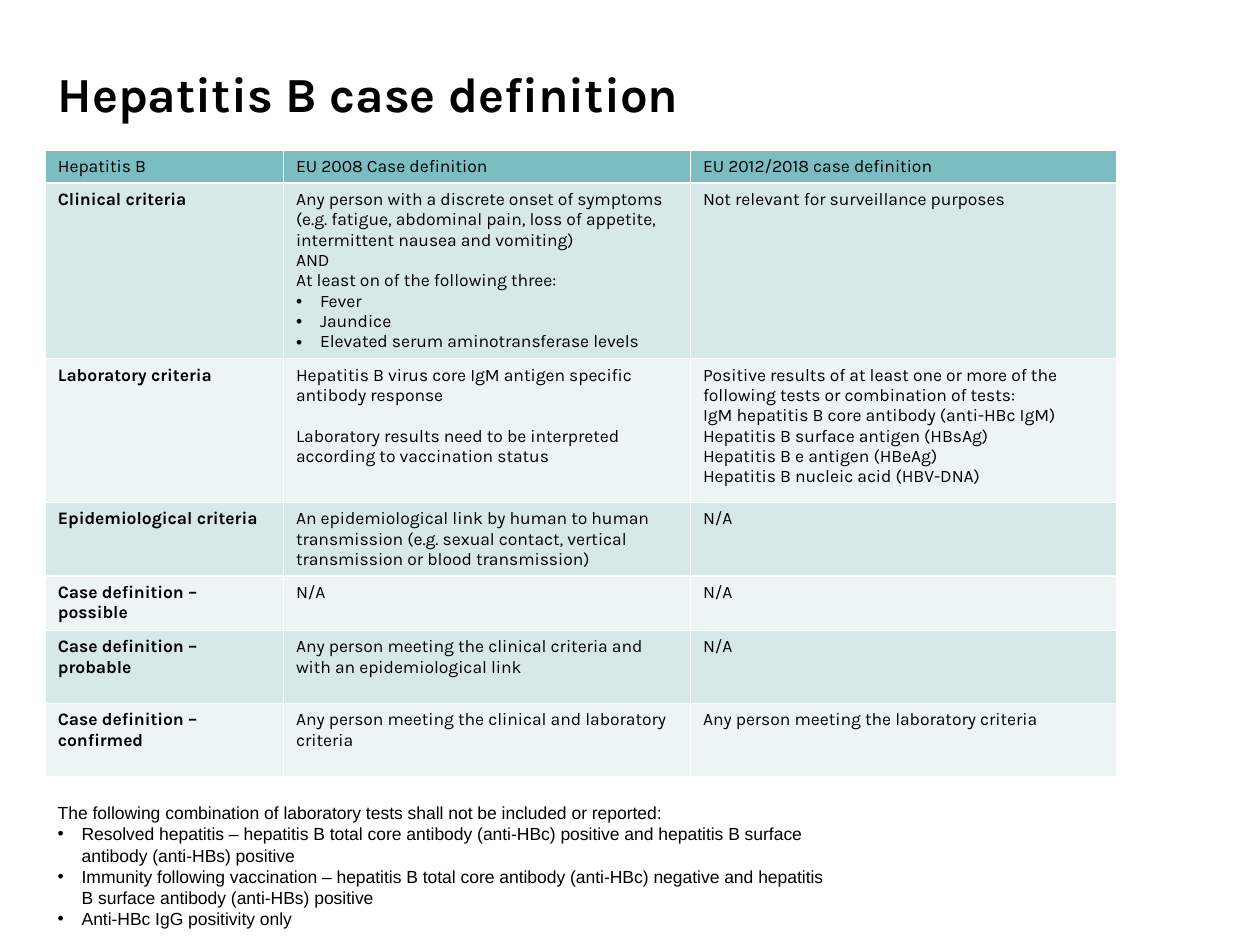
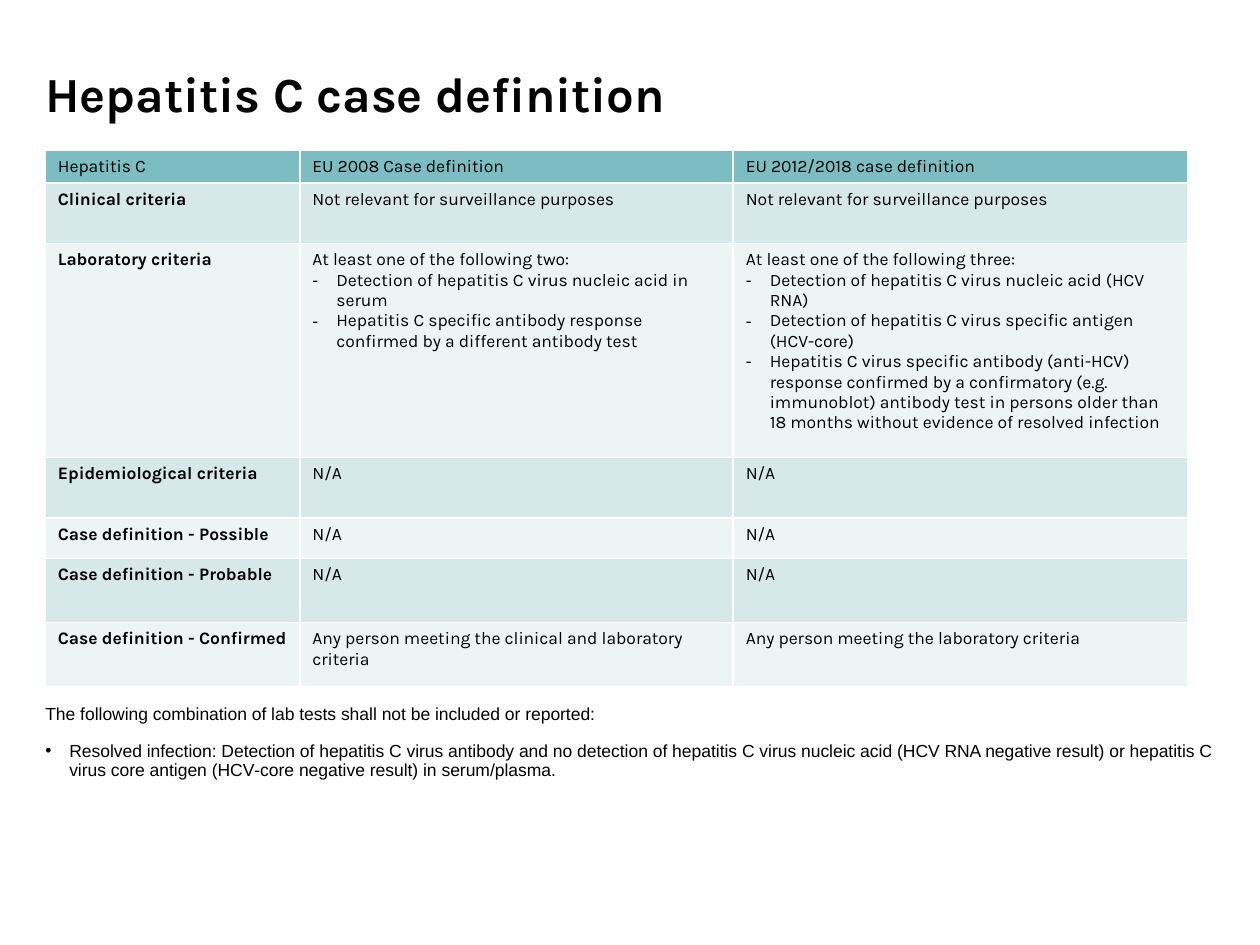
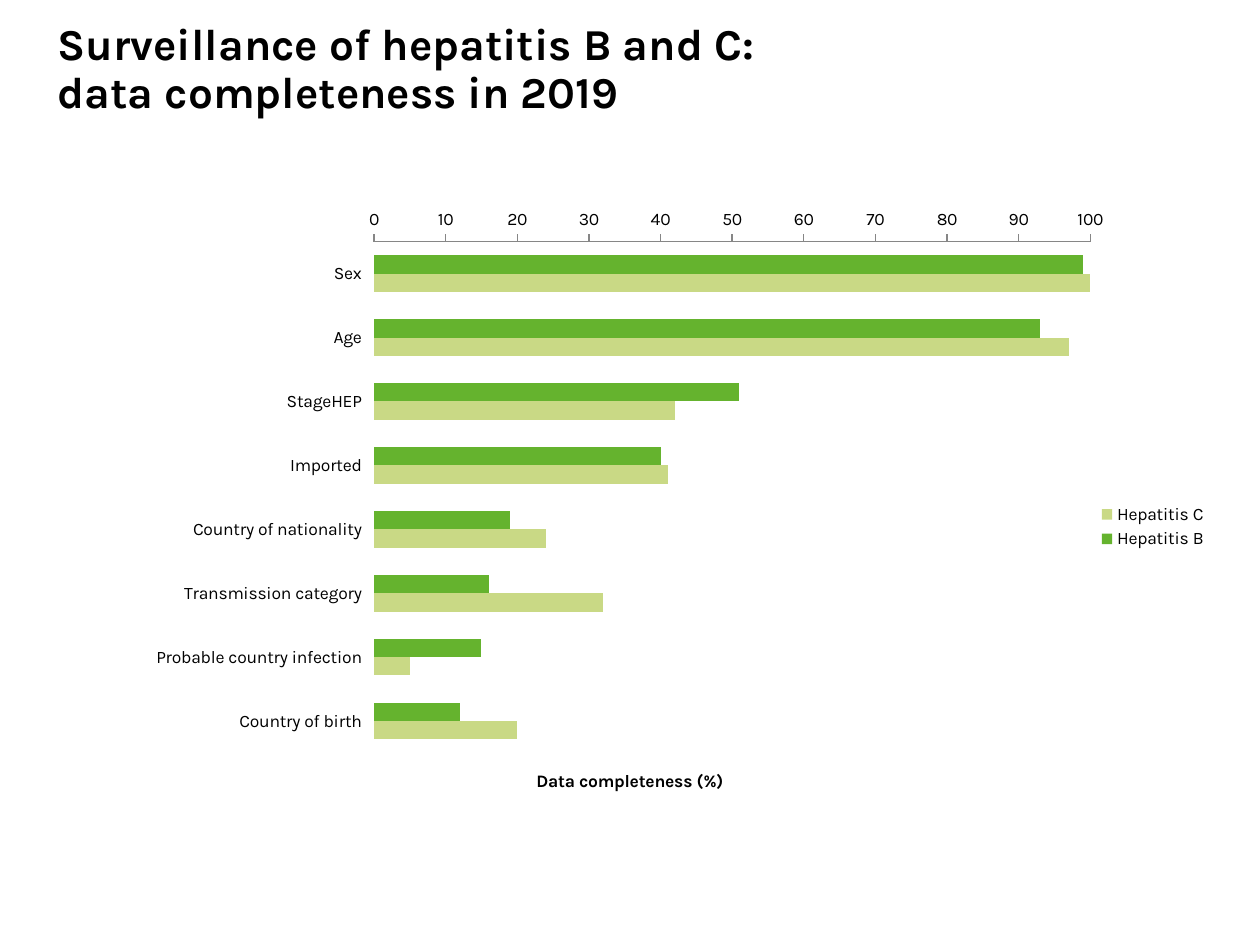
from dataclasses import dataclass

from lxml import etree
from pptx import Presentation
from pptx.chart.data import CategoryChartData
from pptx.dml.color import RGBColor
from pptx.enum import chart as chart_enum
from pptx.enum import text as text_enum
from pptx.oxml import ns
from pptx.util import Inches, Pt


@dataclass(frozen=True)
class Theme:
    heading_font: str = "Karla"
    note_font: str = "Arial"
    title_size: float = 28
    long_title_size: float = 25.2
    body_size: float = 10
    ink: str = "000000"
    white: str = "FFFFFF"
    header: str = "7CBDC1"
    bands: tuple = ("D7E8E9", "ECF4F4")
    axis: str = "868686"
    hepatitis_b: str = "65B32E"
    hepatitis_c: str = "C9D985"


@dataclass(frozen=True)
class Line:
    text: str
    bullet: str = ""
    before: float = 0


THEME = Theme()
LEFT = 0.36
TITLE_BOX = (LEFT, 0.25, 8.06, 1.04)
TABLE_TOP = 1.19
DEFAULT_INSETS = (0.1, 0.05, 0.1, 0.05)
NO_INSETS = (0, 0, 0, 0)
HANGING = 0.19


def rgb(value):
    return RGBColor.from_string(value)


def style_font(font, name, size, bold=False):
    font.name = name
    font.size = Pt(size)
    font.bold = bold
    font.color.rgb = rgb(THEME.ink)


def add_bullet(paragraph, symbol):
    properties = paragraph._p.get_or_add_pPr()
    properties.set("marL", str(Inches(HANGING)))
    properties.set("indent", str(-Inches(HANGING)))
    etree.SubElement(properties, ns.qn("a:buFont"), typeface="Arial")
    etree.SubElement(properties, ns.qn("a:buChar"), char=symbol)


def write_lines(frame, lines, font_name, size, bold=False, spacing=None):
    for index, line in enumerate(lines):
        if isinstance(line, str):
            line = Line(line)
        paragraph = frame.add_paragraph() if index else frame.paragraphs[0]
        paragraph.text = line.text
        if line.bullet:
            add_bullet(paragraph, line.bullet)
        if line.before:
            paragraph.space_before = Pt(line.before)
        if spacing:
            paragraph.line_spacing = spacing
        style_font(paragraph.font, font_name, size, bold)


def add_text(slide, box, lines, font_name, size, insets=DEFAULT_INSETS,
             anchor=text_enum.MSO_ANCHOR.MIDDLE, **style):
    frame = slide.shapes.add_textbox(*map(Inches, box)).text_frame
    frame.word_wrap = True
    frame.auto_size = text_enum.MSO_AUTO_SIZE.NONE
    frame.vertical_anchor = anchor
    (frame.margin_left, frame.margin_top,
     frame.margin_right, frame.margin_bottom) = map(Inches, insets)
    write_lines(frame, lines, font_name, size, **style)


def add_title(slide, title, size=THEME.title_size, insets=DEFAULT_INSETS):
    add_text(slide, TITLE_BOX, [title], THEME.heading_font, size, insets,
             bold=True, spacing=0.9)


def add_borders(cell):
    properties = cell._tc.get_or_add_tcPr()
    for position, edge in enumerate(("a:lnL", "a:lnR", "a:lnT", "a:lnB")):
        border = etree.Element(ns.qn(edge), w=str(Pt(1)))
        fill = etree.SubElement(border, ns.qn("a:solidFill"))
        etree.SubElement(fill, ns.qn("a:srgbClr"), val=THEME.white)
        properties.insert(position, border)


def add_definition_table(slide, left, top, widths, heights, rows):
    table = slide.shapes.add_table(
        len(rows), len(widths), Inches(left), Inches(top),
        Inches(sum(widths)), Inches(sum(heights))).table
    table.horz_banding = False
    for column, width in zip(table.columns, widths):
        column.width = Inches(width)
    for row_index, (row, height, contents) in enumerate(
            zip(table.rows, heights, rows)):
        row.height = Inches(height)
        is_header = row_index == 0
        color = THEME.header if is_header else THEME.bands[(row_index - 1) % 2]
        for column_index, (cell, lines) in enumerate(zip(row.cells, contents)):
            is_criterion = column_index == 0 and not is_header
            write_lines(cell.text_frame, lines, THEME.heading_font,
                        THEME.body_size, bold=is_criterion)
            cell.fill.solid()
            cell.fill.fore_color.rgb = rgb(color)
            add_borders(cell)


def place_plot(chart, x, y, width, height):
    plot_area = chart.element.find(".//" + ns.qn("c:plotArea"))
    for old_layout in plot_area.findall(ns.qn("c:layout")):
        plot_area.remove(old_layout)
    layout = etree.Element(ns.qn("c:layout"))
    manual = etree.SubElement(layout, ns.qn("c:manualLayout"))
    settings = (("layoutTarget", "inner"), ("xMode", "edge"), ("yMode", "edge"),
                ("x", x), ("y", y), ("w", width), ("h", height))
    for tag, value in settings:
        etree.SubElement(manual, ns.qn("c:" + tag), val=str(value))
    plot_area.insert(0, layout)


def add_completeness_chart(slide, box, categories, series):
    data = CategoryChartData(number_format="0")
    data.categories = categories
    for name, values, _ in series:
        data.add_series(name, values)
    chart = slide.shapes.add_chart(
        chart_enum.XL_CHART_TYPE.BAR_CLUSTERED, *map(Inches, box), data).chart
    style_font(chart.font, THEME.heading_font, THEME.body_size)
    chart.has_title = False
    chart.has_legend = True
    chart.legend.position = chart_enum.XL_LEGEND_POSITION.RIGHT
    chart.legend.include_in_layout = False

    plot = chart.plots[0]
    plot.gap_width = 150
    plot.overlap = 0
    plot.vary_by_categories = False
    for bars, (_, _, color) in zip(plot.series, series):
        bars.format.fill.solid()
        bars.format.fill.fore_color.rgb = rgb(color)
        bars.invert_if_negative = False

    variables = chart.category_axis
    variables.reverse_order = True
    variables.crosses = chart_enum.XL_AXIS_CROSSES.MINIMUM
    variables.format.line.fill.background()

    percent = chart.value_axis
    percent.minimum_scale = 0
    percent.maximum_scale = 100
    percent.major_unit = 10
    percent.has_major_gridlines = False
    percent.major_tick_mark = chart_enum.XL_TICK_MARK.OUTSIDE
    percent.tick_labels.number_format = "0"
    percent.tick_labels.number_format_is_linked = False
    percent.format.line.color.rgb = rgb(THEME.axis)
    caption = percent.axis_title.text_frame
    write_lines(caption, ["Data completeness (%)"], THEME.heading_font,
                THEME.body_size, bold=True)
    place_plot(chart, 0.28, 0.06, 0.61, 0.79)


def header_row(disease):
    return [[disease], ["EU 2008 Case definition"],
            ["EU 2012/2018 case definition"]]


def build_hepatitis_b(slide):
    add_title(slide, "Hepatitis B case definition")
    add_text(slide, (LEFT, 6.76, 6.34, 0.4), [
        "The following combination of laboratory tests shall not be included or reported:",
        Line("Resolved hepatitis – hepatitis B total core antibody (anti‐HBc) positive "
             "and hepatitis B surface antibody (anti‐HBs) positive", "•"),
        Line("Immunity following vaccination – hepatitis B total core antibody (anti‐HBc) "
             "negative and hepatitis B surface antibody (anti‐HBs) positive", "•"),
        Line("Anti‐HBc IgG positivity only", "•"),
    ], THEME.note_font, THEME.body_size, insets=(0.1, 0.05, 0.1, 0.23))
    add_definition_table(
        slide, LEFT, TABLE_TOP, (1.89, 3.23, 3.38),
        (0.26, 1.39, 1.14, 0.58, 0.43, 0.58, 0.58), [
            header_row("Hepatitis B"),
            [["Clinical criteria"],
             ["Any person with a discrete onset of symptoms (e.g. fatigue, "
              "abdominal pain, loss of appetite, intermittent nausea and vomiting)",
              "AND",
              "At least on of the following three:",
              Line("Fever", "•"),
              Line("Jaundice", "•"),
              Line("Elevated serum aminotransferase levels", "•")],
             ["Not relevant for surveillance purposes"]],
            [["Laboratory criteria"],
             ["Hepatitis B virus core IgM antigen specific antibody response",
              Line("Laboratory results need to be interpreted according to "
                   "vaccination status", before=11.7)],
             ["Positive results of at least one or more of the following tests "
              "or combination of tests:",
              "IgM hepatitis B core antibody (anti-HBc IgM)",
              "Hepatitis B surface antigen (HBsAg)",
              "Hepatitis B e antigen (HBeAg)",
              "Hepatitis B nucleic acid (HBV-DNA)"]],
            [["Epidemiological criteria"],
             ["An epidemiological link by human to human transmission (e.g. "
              "sexual contact, vertical transmission or blood transmission)"],
             ["N/A"]],
            [["Case definition – possible"], ["N/A"], ["N/A"]],
            [["Case definition – probable"],
             ["Any person meeting the clinical criteria and with an "
              "epidemiological link"],
             ["N/A"]],
            [["Case definition – confirmed"],
             ["Any person meeting the clinical and laboratory criteria"],
             ["Any person meeting the laboratory criteria"]],
        ])


def build_hepatitis_c(slide):
    add_title(slide, "Hepatitis C case definition", insets=NO_INSETS)
    add_text(slide, (LEFT, 5.6, 9.32, 0.79), [
        "The following combination of lab tests shall not be included or reported:",
        Line("Resolved infection: Detection of hepatitis C virus antibody and no "
             "detection of hepatitis C virus nucleic acid (HCV RNA negative result) or "
             "hepatitis C virus core antigen (HCV‐core negative result) in serum/plasma.",
             "•", before=10),
    ], THEME.note_font, THEME.body_size, insets=NO_INSETS,
        anchor=text_enum.MSO_ANCHOR.TOP, spacing=0.9)
    add_definition_table(
        slide, LEFT, TABLE_TOP, (2.02, 3.44, 3.61),
        (0.26, 0.48, 1.7, 0.48, 0.32, 0.51, 0.51), [
            header_row("Hepatitis C"),
            [["Clinical criteria"],
             ["Not relevant for surveillance purposes"],
             ["Not relevant for surveillance purposes"]],
            [["Laboratory criteria"],
             ["At least one of the following two:",
              Line("Detection of hepatitis C virus nucleic acid in serum", "-"),
              Line("Hepatitis C specific antibody response confirmed by a "
                   "different antibody test", "-")],
             ["At least one of the following three:",
              Line("Detection of hepatitis C virus nucleic acid (HCV RNA)", "-"),
              Line("Detection of hepatitis C virus specific antigen (HCV-core)", "-"),
              Line("Hepatitis C virus specific antibody (anti-HCV) response "
                   "confirmed by a confirmatory (e.g. immunoblot) antibody test in "
                   "persons older than 18 months without evidence of resolved "
                   "infection", "-")]],
            [["Epidemiological criteria"], ["N/A"], ["N/A"]],
            [["Case definition - Possible"], ["N/A"], ["N/A"]],
            [["Case definition - Probable"], ["N/A"], ["N/A"]],
            [["Case definition - Confirmed"],
             ["Any person meeting the clinical and laboratory criteria"],
             ["Any person meeting the laboratory criteria"]],
        ])


def build_completeness(slide):
    add_title(slide, "Surveillance of hepatitis B and C: \ndata completeness in 2019",
              THEME.long_title_size, insets=(0.1, 0.05, 0.1, 0.47))
    add_completeness_chart(
        slide, (LEFT, 1.61, 9.32, 5.14),
        ["Sex", "Age", "StageHEP", "Imported", "Country of nationality",
         "Transmission category", "Probable country infection", "Country of birth"],
        [("Hepatitis B", (99, 93, 51, 40, 19, 16, 15, 12), THEME.hepatitis_b),
         ("Hepatitis C", (100, 97, 42, 41, 24, 32, 5, 20), THEME.hepatitis_c)])


def main():
    deck = Presentation()
    deck.slide_width = Inches(10)
    deck.slide_height = Inches(7.5)
    for build in (build_hepatitis_b, build_hepatitis_c, build_completeness):
        build(deck.slides.add_slide(deck.slide_layouts[6]))
    deck.save("out.pptx")


if __name__ == "__main__":
    main()
